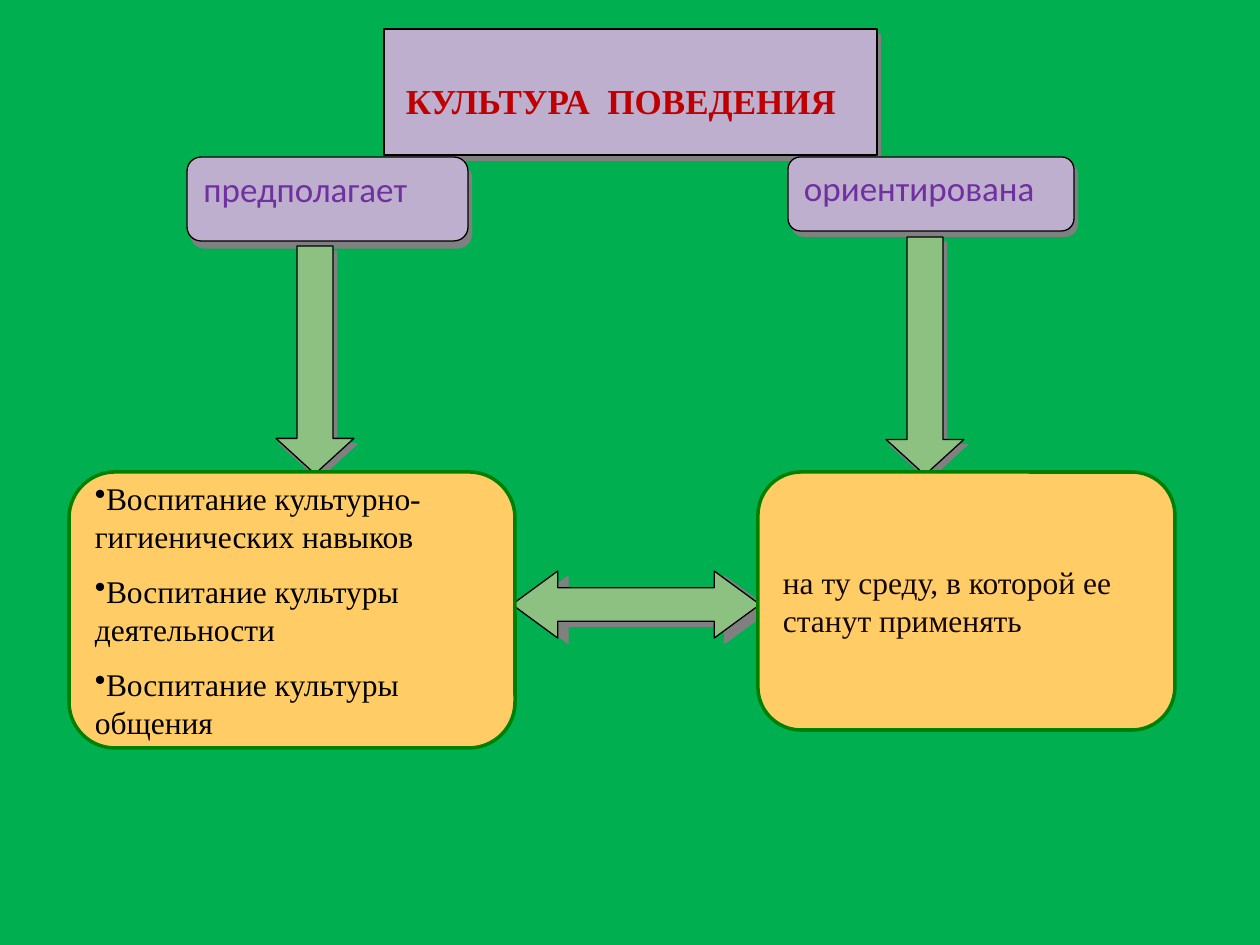
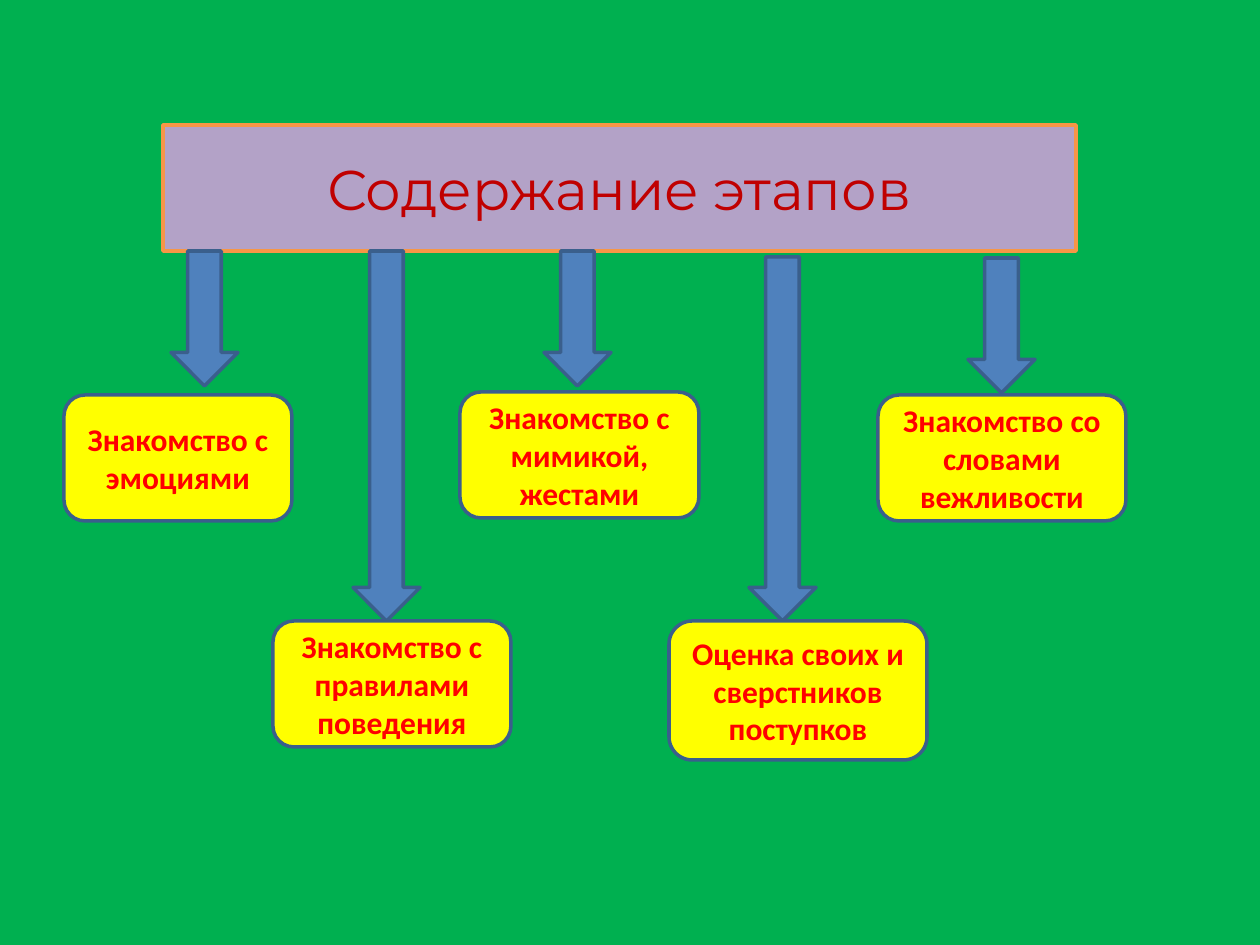
"""Two slides: what behaviour culture involves, and the stages of teaching it."""
from lxml import etree
from pptx import Presentation
from pptx.dml.color import RGBColor
from pptx.enum.shapes import MSO_SHAPE
from pptx.enum.text import MSO_ANCHOR, PP_ALIGN
from pptx.oxml.ns import qn
from pptx.util import Pt

ROUNDED, DOWN, BOTH_WAYS = (
    MSO_SHAPE.ROUNDED_RECTANGLE, MSO_SHAPE.DOWN_ARROW, MSO_SHAPE.LEFT_RIGHT_ARROW)
TOP, MIDDLE = MSO_ANCHOR.TOP, MSO_ANCHOR.MIDDLE
LEFT, CENTER = PP_ALIGN.LEFT, PP_ALIGN.CENTER
EMU_PER_PX = 914400 / 126
TITLE_ONLY = 5

GREEN, BLACK, RED = "00B050", "000000", "C00000"
LABEL = {"fill": "BFAFCF", "line": BLACK, "weight": 0.75}
ARROW = {"fill": "8DC182", "line": BLACK, "weight": 0.75}
CARD = {"fill": "FFCC66", "line": "008000", "weight": 2}
HEADING = {"fill": "B3A2C7", "line": "F79646", "weight": 2}
STAGE_ARROW = {"fill": "4F81BD", "line": "3A5F8C", "weight": 2}
STAGE = {"fill": "FFFF00", "line": "3A5F8C", "weight": 2}
NEAR_SHADOW, FAR_SHADOW, FLAT_SHADOW = (3.6, 56), (4.5, 63), (6.7, 27)

CULTURE_TITLE = "КУЛЬТУРА  ПОВЕДЕНИЯ"
LABELS = [
    ("предполагает", (187, 157, 281, 84), FAR_SHADOW),
    ("ориентирована", (788, 157, 286, 74), NEAR_SHADOW),
]
CULTURE_ARROWS = [
    (DOWN, (276, 246, 78, 228), (0.461, 0.456), NEAR_SHADOW),
    (DOWN, (886, 237, 78, 238), (0.461, 0.456), NEAR_SHADOW),
    (BOTH_WAYS, (512, 571, 248, 67), (0.5, 0.682), FLAT_SHADOW),
]
ENVIRONMENT = ["на ту среду, в которой ее станут применять"]
SKILLS = [
    "Воспитание культурно-гигиенических навыков",
    "Воспитание культуры деятельности",
    "Воспитание культуры общения",
]

STAGES_TITLE = "Содержание этапов"
STAGES = [
    ("Знакомство с эмоциями", (64, 395, 228, 126), (171, 251, 67, 135)),
    ("Знакомство с правилами поведения", (273, 621, 238, 126), (353, 251, 67, 370)),
    ("Знакомство с мимикой, жестами", (460, 392, 239, 126), (544, 251, 67, 135)),
    ("Оценка своих и сверстников поступков", (669, 621, 258, 139), (749, 257, 67, 364)),
    ("Знакомство со словами вежливости", (878, 395, 248, 126), (968, 258, 67, 135)),
]


def px(length):
    return round(length * EMU_PER_PX)


def color(code):
    return RGBColor.from_string(code)


def paint(shape, style, shadow=None):
    shape.fill.solid()
    shape.fill.fore_color.rgb = color(style["fill"])
    shape.line.color.rgb = color(style["line"])
    shape.line.width = Pt(style["weight"])
    shape.shadow.inherit = False
    if shadow:
        distance, angle = shadow
        effects = shape._element.spPr.find(qn("a:effectLst"))
        cast = etree.SubElement(effects, qn("a:outerShdw"), blurRad="0", algn="ctr",
                                dist=str(Pt(distance)), dir=str(angle * 60000), rotWithShape="0")
        etree.SubElement(cast, qn("a:srgbClr"), val="808080")


def add_shape(page, kind, place, style, shadow=None, adjustments=()):
    shape = page.shapes.add_shape(kind, *map(px, place))
    for index, value in enumerate(adjustments):
        shape.adjustments[index] = value
    paint(shape, style, shadow)
    return shape


def write(shape, lines, font, size, ink, bold=False, align=LEFT, anchor=MIDDLE,
          after=0, bullet=None):
    frame = shape.text_frame
    frame.word_wrap = True
    frame.vertical_anchor = anchor
    frame.text = "\n".join(lines)
    for para in frame.paragraphs:
        para.alignment = align
        para.space_after = Pt(after)
        para.font.name = font
        para.font.size = Pt(size)
        para.font.bold = bold
        para.font.color.rgb = color(ink)
        if bullet:
            mark = etree.Element(qn("a:buChar"), char=bullet)
            para._p.get_or_add_pPr().find(qn("a:defRPr")).addprevious(mark)


def add_page(deck, geometry, place, style, shadow=None):
    """Add a slide whose title placeholder is a filled, outlined shape."""
    page = deck.slides.add_slide(deck.slide_layouts[TITLE_ONLY])
    title = page.shapes.title
    title.left, title.top, title.width, title.height = map(px, place)
    outline = etree.Element(qn("a:prstGeom"), prst=geometry)
    etree.SubElement(outline, qn("a:avLst"))
    title._element.spPr.insert(1, outline)
    paint(title, style, shadow)
    return page, title


def build_culture(deck):
    page, title = add_page(deck, "flowChartAlternateProcess", (384, 29, 493, 126),
                           LABEL, NEAR_SHADOW)
    write(title, [CULTURE_TITLE], "Times New Roman", 20, RED, bold=True, anchor=TOP)
    title.text_frame.margin_left = px(22)
    title.text_frame.margin_top = px(50)
    for text, place, shadow in LABELS:
        label = add_shape(page, ROUNDED, place, LABEL, shadow)
        write(label, [text], "Calibri", 20, "7030A0", anchor=TOP, after=10)
    for kind, place, adjustments, shadow in CULTURE_ARROWS:
        add_shape(page, kind, place, ARROW, shadow, adjustments)
    environment = add_shape(page, ROUNDED, (758, 472, 417, 258), CARD)
    write(environment, ENVIRONMENT, "Times New Roman", 18, "140707")
    skills = add_shape(page, ROUNDED, (69, 472, 446, 276), CARD)
    write(skills, SKILLS, "Times New Roman", 18, BLACK, after=10, bullet="•")


def build_stages(deck):
    page, title = add_page(deck, "roundRect", (163, 125, 913, 126), HEADING)
    write(title, [STAGES_TITLE], "Montserrat", 32, RED, align=CENTER)
    for text, place, arrow_place in STAGES:
        add_shape(page, DOWN, arrow_place, STAGE_ARROW)
        stage = add_shape(page, ROUNDED, place, STAGE)
        write(stage, [text], "Calibri", 18, "FF0000", bold=True, align=CENTER)


def main():
    deck = Presentation()
    deck.slide_width, deck.slide_height = px(1260), px(945)
    backdrop = deck.slide_master.background.fill
    backdrop.solid()
    backdrop.fore_color.rgb = color(GREEN)
    build_culture(deck)
    build_stages(deck)
    deck.save("out.pptx")


if __name__ == "__main__":
    main()
